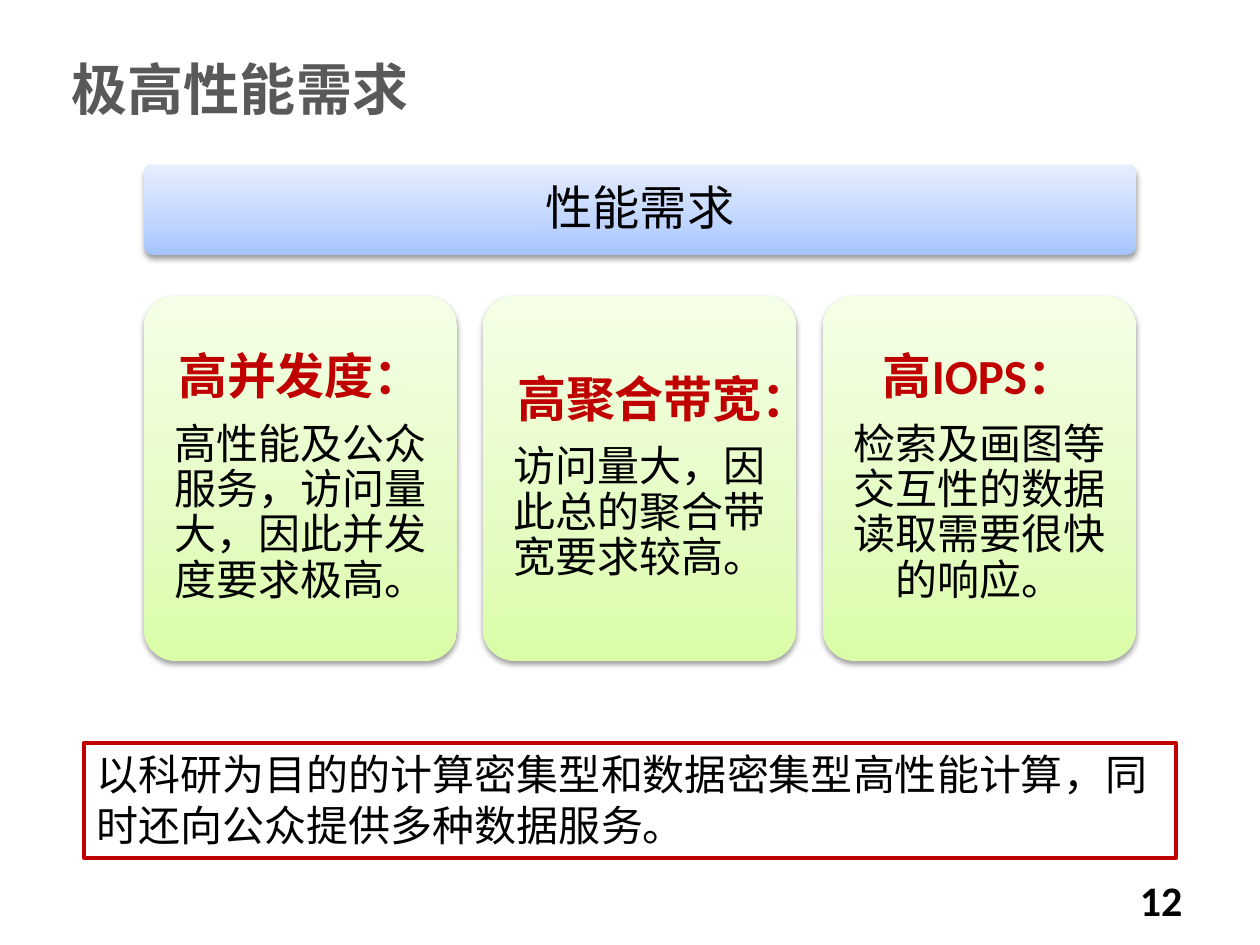
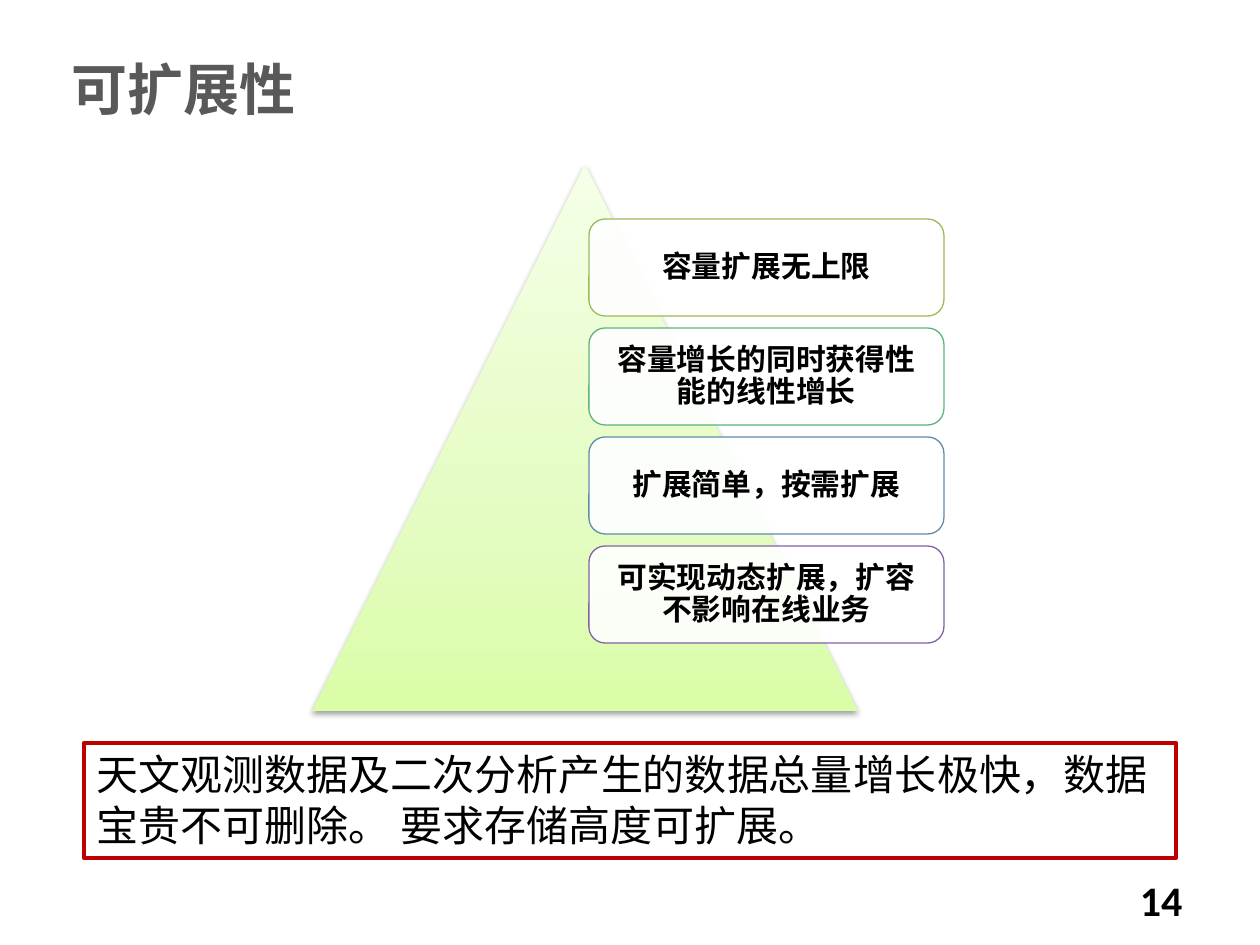
"""Build two slides on performance and scalability requirements for storage."""
from lxml import etree
from pptx import Presentation
from pptx import util as u
from pptx.dml.color import RGBColor
from pptx.enum import lang, shapes, text
from pptx.oxml import parse_xml
from pptx.oxml.ns import nsdecls, qn

BLACK = RGBColor(0x00, 0x00, 0x00)
WHITE = RGBColor(0xFF, 0xFF, 0xFF)
GREY = RGBColor(0x59, 0x59, 0x59)
RED = RGBColor(0xC0, 0x00, 0x00)
BLUES = [RGBColor(0xA4, 0xC4, 0xFF), RGBColor(0xBF, 0xD4, 0xFF), RGBColor(0xE6, 0xEE, 0xFF)]
GREENS = [RGBColor(0xDA, 0xFD, 0xA7), RGBColor(0xE4, 0xFC, 0xC2), RGBColor(0xF5, 0xFF, 0xE7)]
STEP_LINES = [
    RGBColor(0x9B, 0xBB, 0x59),
    RGBColor(0x5C, 0xB3, 0x7C),
    RGBColor(0x60, 0x8C, 0xAB),
    RGBColor(0x80, 0x64, 0xA2),
]
STOPS = [0, 35, 100]
BODY_FONT = "Calibri"
TITLE_FONT = "Noto Sans CJK SC"
CENTER = text.PP_ALIGN.CENTER
LEFT = text.PP_ALIGN.LEFT
ROUNDED = shapes.MSO_SHAPE.ROUNDED_RECTANGLE

PAGES = [
    ("极高性能需求", "12", "以科研为目的的计算密集型和数据密集型高性能计算，同时还向公众提供多种数据服务。"),
    ("可扩展性", "14", "天文观测数据及二次分析产生的数据总量增长极快，数据宝贵不可删除。 要求存储高度可扩展。"),
]
CARDS = [
    ("高并发度：", "高性能及公众服务，访问量大，因此并发度要求极高。"),
    ("高聚合带宽：", "访问量大，因此总的聚合带宽要求较高。"),
    ("高IOPS：", "检索及画图等交互性的数据读取需要很快的响应。"),
]
STEPS = [
    "容量扩展无上限",
    "容量增长的同时获得性能的线性增长",
    "扩展简单，按需扩展",
    "可实现动态扩展，扩容不影响在线业务",
]


def px(*lengths):
    return [u.Emu(round(length * 914400 / 126)) for length in lengths]


def write(shape, lines, align, insets=(13, 6), spacing=1.0, anchor=text.MSO_ANCHOR.MIDDLE, font=BODY_FONT):
    frame = shape.text_frame
    frame.word_wrap = True
    frame.vertical_anchor = anchor
    frame.margin_left = frame.margin_right = px(insets[0])[0]
    frame.margin_top = frame.margin_bottom = px(insets[1])[0]
    frame.text = "\n".join(line[0] for line in lines)
    for paragraph, (_, size, color, bold) in zip(frame.paragraphs, lines):
        paragraph.alignment = align
        paragraph.line_spacing = spacing
        if len(lines) > 1:
            paragraph.space_after = u.Pt(round(size * 0.35))
        paragraph._p.get_or_add_pPr().set("hangingPunct", "1")
        for run in paragraph.runs:
            run.font.size = u.Pt(size)
            run.font.bold = bold
            run.font.name = font
            run.font.color.rgb = color
            run.font.language_id = lang.MSO_LANGUAGE_ID.SIMPLIFIED_CHINESE
            etree.SubElement(run._r.get_or_add_rPr(), qn("a:ea")).set("typeface", font)


presentation = Presentation()
presentation.slide_width, presentation.slide_height = px(1260, 945)
slides = [presentation.slides.add_slide(presentation.slide_layouts[6]) for _ in PAGES]
performance, scalability = slides
shaded = []

band = performance.shapes.add_shape(ROUNDED, *px(144, 165, 992, 90))
band.adjustments[0] = 0.1
write(band, [("性能需求", 27, BLACK, False)], CENTER, (14, 14), 0.9)
shaded.append((band, BLUES))

for index, (heading, detail) in enumerate(CARDS):
    card = performance.shapes.add_shape(ROUNDED, *px(144 + index * (992 - 313) // 2, 296, 313, 365))
    card.adjustments[0] = 0.1
    write(card, [(heading, 28, RED, True), (detail, 24, BLACK, False)], CENTER, (15, 15), 0.9)
    shaded.append((card, GREENS))

triangle = scalability.shapes.add_shape(shapes.MSO_SHAPE.ISOSCELES_TRIANGLE, *px(312, 165, 546, 546))
shaded.append((triangle, GREENS))

for index, (label, color) in enumerate(zip(STEPS, STEP_LINES)):
    step = scalability.shapes.add_shape(ROUNDED, *px(589, 219 + index * 109, 355, 97))
    step.shadow.inherit = False
    step.fill.solid()
    step.fill.fore_color.rgb = WHITE
    white = step._element.spPr.find(qn("a:solidFill")).find(qn("a:srgbClr"))
    etree.SubElement(white, qn("a:alpha")).set("val", "90000")
    step.line.color.rgb = color
    step.line.width = u.Pt(0.75)
    write(step, [(label, 17, BLACK, True)], CENTER, (9, 9), 0.9)

for shape, colors in shaded:
    shape.shadow.inherit = False
    shape.line.fill.background()
    shape.fill.background()
    properties = shape._element.spPr
    stops = "".join(
        f'<a:gs pos="{stop * 1000}"><a:srgbClr val="{color}"/></a:gs>' for stop, color in zip(STOPS, colors)
    )
    gradient = parse_xml(
        f'<a:gradFill {nsdecls("a")} rotWithShape="1"><a:gsLst>{stops}</a:gsLst>'
        '<a:lin ang="16200000" scaled="0"/></a:gradFill>'
    )
    properties.replace(properties.find(qn("a:noFill")), gradient)
    shadow = parse_xml(
        f'<a:outerShdw {nsdecls("a")} blurRad="40000" dist="20000" dir="5400000" rotWithShape="0">'
        '<a:srgbClr val="000000"><a:alpha val="38000"/></a:srgbClr></a:outerShdw>'
    )
    properties.find(qn("a:effectLst")).append(shadow)

for slide, (title, number, summary) in zip(slides, PAGES):
    title_box = slide.shapes.add_textbox(*px(59, 49, 699, 78))
    write(title_box, [(title, 32, GREY, True)], LEFT, font=TITLE_FONT)

    callout = slide.shapes.add_shape(shapes.MSO_SHAPE.RECTANGLE, *px(84, 743, 1092, 115))
    callout.shadow.inherit = False
    callout.fill.background()
    callout.line.color.rgb = RED
    callout.line.width = u.Pt(2.5)
    write(callout, [(summary, 24, BLACK, False)], LEFT, anchor=text.MSO_ANCHOR.TOP)

    number_box = slide.shapes.add_textbox(*px(1106, 869, 110, 63))
    write(number_box, [(number, 24, BLACK, True)], CENTER, anchor=text.MSO_ANCHOR.TOP)

presentation.save("out.pptx")
